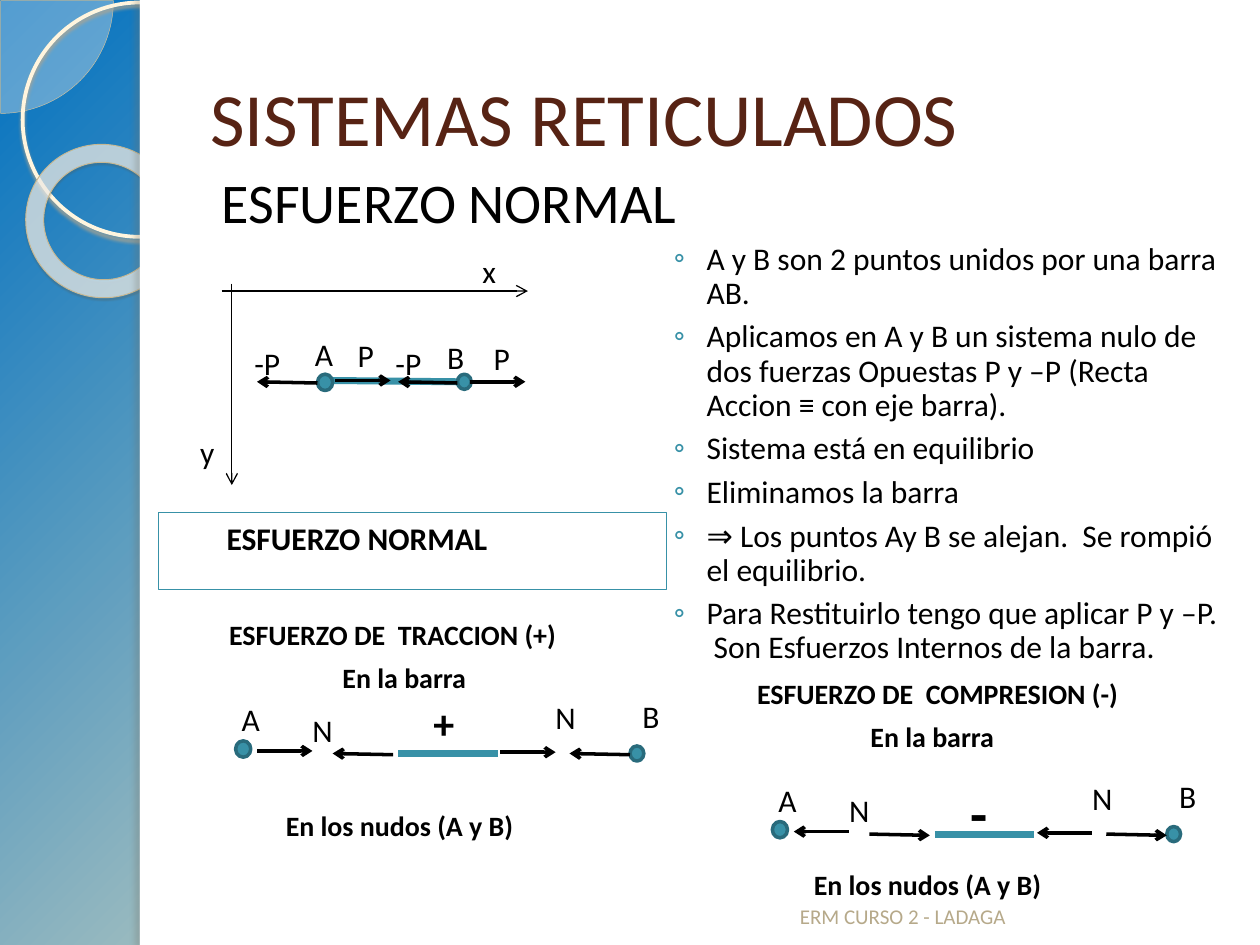
from lxml import etree
from pptx import Presentation
from pptx.dml.color import RGBColor
from pptx.enum.shapes import MSO_CONNECTOR, MSO_SHAPE
from pptx.enum.text import MSO_ANCHOR
from pptx.oxml.ns import qn
from pptx.util import Inches, Pt

STRAIGHT = MSO_CONNECTOR.STRAIGHT
RECTANGLE, OVAL = MSO_SHAPE.RECTANGLE, MSO_SHAPE.OVAL
PIE, DONUT = MSO_SHAPE.PIE, MSO_SHAPE.DONUT
TOP, MIDDLE, BOTTOM = MSO_ANCHOR.TOP, MSO_ANCHOR.MIDDLE, MSO_ANCHOR.BOTTOM
FONT = "Calibri"
BLACK, WHITE, TEAL, DARK_TEAL = "000000", "FFFFFF", "3891A7", "296B7C"

POINTS = [
    "A y B son 2 puntos unidos por una barra AB.",
    "Aplicamos en A y B un sistema nulo de dos fuerzas Opuestas P y –P (Recta Accion ≡ con eje barra).",
    "Sistema está en equilibrio",
    "Eliminamos la barra",
    "⇒ Los puntos Ay B se alejan.  Se rompió el equilibrio.",
    "Para Restituirlo tengo que aplicar P y –P.  Son Esfuerzos Internos de la barra.",
]


def color(value):
    return RGBColor.from_string(value)


def add_child(parent, tag, **attributes):
    return etree.SubElement(parent, qn(tag), {k: str(v) for k, v in attributes.items()})


def add_figure(page, kind, left, top, width, height, fill=None, line=None, weight=1, alpha=None):
    figure = page.shapes.add_shape(kind, Inches(left), Inches(top), Inches(width), Inches(height))
    figure.shadow.inherit = False
    if fill:
        figure.fill.solid()
        figure.fill.fore_color.rgb = color(fill)
        if alpha:
            tint = figure.element.spPr.find(qn("a:solidFill"))[0]
            add_child(tint, "a:alpha", val=alpha * 1000)
    else:
        figure.fill.background()
    if line:
        figure.line.color.rgb = color(line)
        figure.line.width = Pt(weight)
    else:
        figure.line.fill.background()
    return figure


def add_shadow(figure, tint, alpha, blur, distance, angle):
    effects = figure.element.spPr.find(qn("a:effectLst"))
    shadow = add_child(effects, "a:outerShdw", blurRad=Pt(blur), dist=Pt(distance),
                       dir=angle * 60000, algn="tl", rotWithShape=0)
    add_child(add_child(shadow, "a:srgbClr", val=tint), "a:alpha", val=alpha * 1000)


def add_line(page, start, end, tint=BLACK, weight=2, arrow="tailEnd"):
    line = page.shapes.add_connector(STRAIGHT, *[Inches(v) for v in (*start, *end)])
    line.line.color.rgb = color(tint)
    line.line.width = Pt(weight)
    if arrow:
        add_child(line.line._get_or_add_ln(), "a:" + arrow, type="arrow")
    add_child(line.element.spPr, "a:effectLst")


def write(para, text, size, tint=BLACK, bold=False, margin=0, indent=0, before=0):
    span = para.add_run()
    span.text = text
    span.font.name = FONT
    span.font.size = Pt(size)
    span.font.bold = bold
    span.font.color.rgb = color(tint)
    para.space_before = Pt(before)
    properties = para._p.get_or_add_pPr()
    properties.set("marL", str(Inches(margin)))
    properties.set("indent", str(Inches(indent)))


def add_box(page, left, top, width, height, anchor=TOP):
    box = page.shapes.add_textbox(Inches(left), Inches(top), Inches(width), Inches(height))
    box.text_frame.word_wrap = True
    box.text_frame.vertical_anchor = anchor
    return box.text_frame


def add_label(page, text, left, top, width=0.48, height=0.4, size=18, bold=False):
    write(add_box(page, left, top, width, height).paragraphs[0], text, size, bold=bold)


def add_joint(page, left, top, size):
    add_figure(page, OVAL, left, top, size, size + 0.01, TEAL, DARK_TEAL, 2)


def paint_background(page):
    page.background.fill.gradient()
    gradient = page.element.find(".//" + qn("a:gradFill"))
    for child in list(gradient):
        gradient.remove(child)
    stops = add_child(gradient, "a:gsLst")
    for position, tint in ((0, "0070C0"), (82, "FFEBBE"), (100, "C9B484")):
        add_child(add_child(stops, "a:gs", pos=position * 1000), "a:srgbClr", val=tint)
    focus = add_child(gradient, "a:path", path="circle")
    add_child(focus, "a:fillToRect", l=-24000, t=-20000, r=124000, b=120000)


def draw_sidebar(page, edge):
    quarter = add_figure(page, PIE, -0.89, -0.89, 1.79, 1.79, "FEFAF4", "D3C39F", 0.25, 33)
    quarter.adjustments[0] = 0
    quarter.adjustments[1] = 54
    circle = add_figure(page, OVAL, 0.18, 0.02, 1.86, 1.86, line="FFF5DE", weight=2.15)
    add_shadow(circle, "B0A68F", 85, 2, 2, 90)
    ring = add_figure(page, DONUT, 0.2, 1.15, 1.23, 1.21, "FFFCF6", "C7B893", 0.58, 66)
    ring.adjustments[0] = 0.118
    ring.rotation = 38.6
    add_shadow(ring, "5A5444", 35, 1, 1.2, 75)
    add_figure(page, RECTANGLE, edge, 0, 10 - edge, 7.5, WHITE)
    strip = add_figure(page, RECTANGLE, edge, 0, 0.08, 7.5, WHITE)
    add_shadow(strip, "736F63", 25, 3, 3, 180)


def add_headings(page, left, width):
    title = add_box(page, left, 0.3, width, 1.25, MIDDLE)
    write(title.paragraphs[0], "SISTEMAS RETICULADOS", 43, "572314")
    subtitle = add_box(page, left, 1.28, width, 0.67)
    write(subtitle.paragraphs[0], "ESFUERZO NORMAL", 32, margin=0.09, before=6)
    footer = add_box(page, 6.25, 6.9, 3.17, 0.52, BOTTOM)
    write(footer.paragraphs[0], "ERM CURSO 2 - LADAGA", 12, "B6A98A")


def add_points(page, left, top, width, height):
    frame = add_box(page, left, top, width, height)
    for index, text in enumerate(POINTS):
        para = frame.add_paragraph() if index else frame.paragraphs[0]
        write(para, text, 18, margin=0.7, indent=-0.26, before=5.5)
        para.line_spacing = 0.9
        properties = para._p.get_or_add_pPr()
        add_child(add_child(properties, "a:buClr"), "a:srgbClr", val=TEAL)
        add_child(properties, "a:buFont", typeface=FONT)
        add_child(properties, "a:buChar", char="◦")


def draw_axes(page, left, top):
    add_line(page, (left + 0.27, top + 0.36), (left + 2.7, top + 0.36), weight=0.75)
    add_line(page, (left + 0.35, top + 0.3), (left + 0.35, top + 1.9), weight=0.75)
    add_label(page, "x", left + 2.24, top)
    add_label(page, "y", left, top + 1.44)


def draw_loaded_bar(page, left, top):
    labels = (("-P", 0, 0.07), ("A", 0.48, 0), ("P", 0.82, 0.01),
              ("-P", 1.12, 0.07), ("B", 1.53, 0.02), ("P", 1.9, 0.03))
    for text, x, y in labels:
        add_label(page, text, left + x, top + y)
    add_line(page, (left + 0.7, top + 0.41), (left + 1.71, top + 0.42), TEAL, 4, None)
    add_joint(page, left + 0.6, top + 0.36, 0.12)
    add_joint(page, left + 1.71, top + 0.36, 0.11)
    forces = ((0.6, 0.43, 0.12, 0.42), (1.81, 0.42, 2.25, 0.42),
              (0.74, 0.41, 1.18, 0.41), (1.71, 0.43, 1.24, 0.42))
    for x1, y1, x2, y2 in forces:
        add_line(page, (left + x1, top + y1), (left + x2, top + y2))


def add_banner(page, left, top, width, height):
    frame = add_figure(page, RECTANGLE, left, top, width, height, line=TEAL, weight=0.75).text_frame
    frame.word_wrap = True
    frame.vertical_anchor = TOP
    para = frame.paragraphs[0]
    para.alignment = 1
    write(para, "ESFUERZO NORMAL", 18, bold=True, margin=0.44, before=5.5)


def add_caption(page, left, top, width, heading):
    frame = add_box(page, left, top, width, 2.1)
    lines = ((heading, 0.44, 5.5), ("En la barra", 1.34, 5.5), ("En los nudos (A y B)", 0.89, 65.3))
    for index, (text, margin, before) in enumerate(lines):
        para = frame.add_paragraph() if index else frame.paragraphs[0]
        write(para, text, 16, bold=True, margin=margin, before=before)


def draw_internal_forces(page, left, top, sign, sign_size, arrow):
    add_line(page, (left + 1.34, top + 0.5), (left + 2.13, top + 0.5), TEAL, 4, None)
    for text, x, y in (("A", 0, 0.03), ("N", 0.56, 0.11), ("N", 2.49, 0.01), ("B", 3.18, 0)):
        add_label(page, text, left + x, top + y)
    add_label(page, sign, left + 1.52, top + 0.01, height=0.5, size=sign_size, bold=True)
    add_joint(page, left + 0.05, top + 0.4, 0.12)
    add_joint(page, left + 3.18, top + 0.44, 0.11)
    forces = ((0.22, 0.48, 0.66, 0.48), (1.3, 0.51, 0.82, 0.5),
              (2.15, 0.49, 2.59, 0.49), (3.18, 0.51, 2.7, 0.5))
    for x1, y1, x2, y2 in forces:
        add_line(page, (left + x1, top + y1), (left + x2, top + y2), arrow=arrow)


def main():
    deck = Presentation()
    deck.slide_width, deck.slide_height = Inches(10), Inches(7.5)
    page = deck.slides.add_slide(deck.slide_layouts[6])
    paint_background(page)
    draw_sidebar(page, 1.11)
    add_headings(page, 1.57, 8.2)
    add_points(page, 4.81, 1.88, 4.96, 3.68)
    draw_axes(page, 1.49, 1.95)
    draw_loaded_bar(page, 1.92, 2.61)
    add_banner(page, 1.26, 4.07, 4.03, 0.61)
    add_caption(page, 1.28, 4.85, 4.03, "ESFUERZO DE  TRACCION (+)")
    draw_internal_forces(page, 1.82, 5.48, "+", 24, "tailEnd")
    add_caption(page, 5.47, 5.32, 4.41, "ESFUERZO DE  COMPRESION (-)")
    draw_internal_forces(page, 6.08, 6.12, "-", 32, "headEnd")
    deck.save("out.pptx")


if __name__ == "__main__":
    main()
